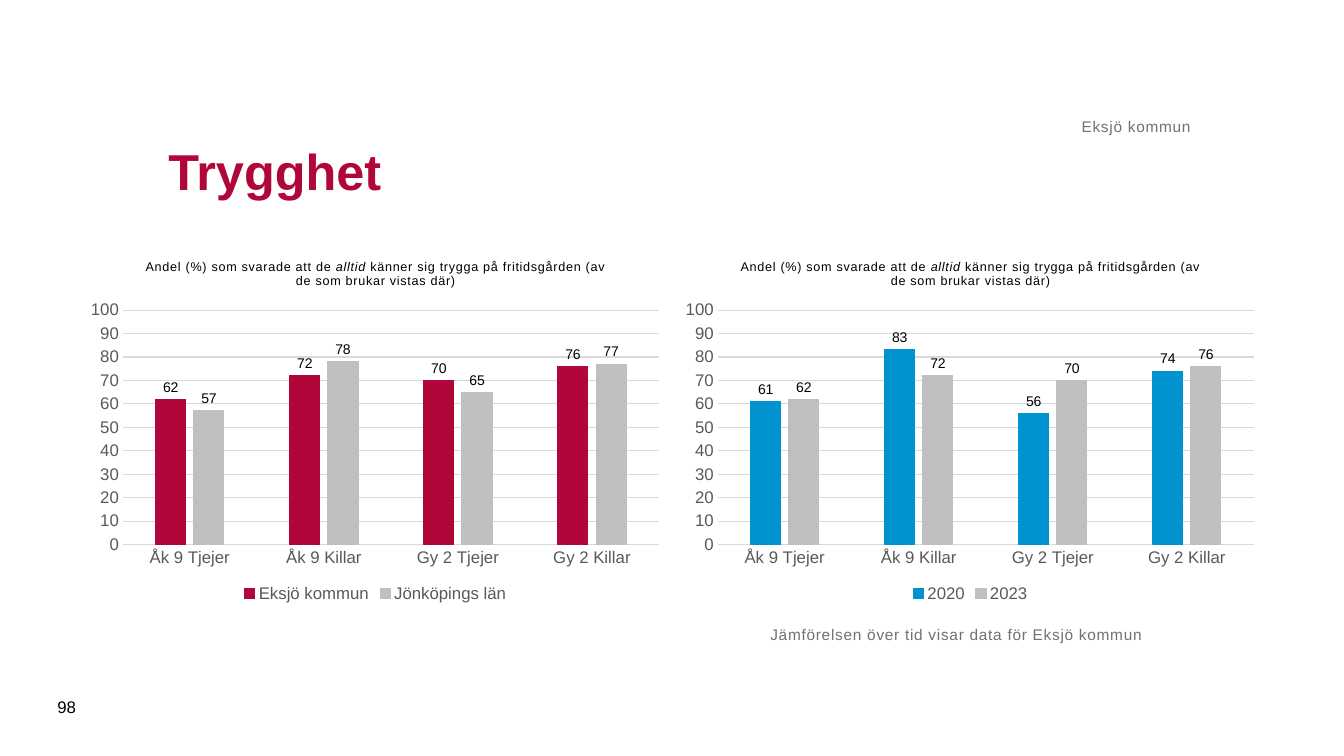
from lxml import etree
from pptx import Presentation
from pptx.chart.data import CategoryChartData
from pptx.dml.color import RGBColor
from pptx.enum.chart import XL_CHART_TYPE, XL_LABEL_POSITION, XL_LEGEND_POSITION, XL_TICK_MARK
from pptx.enum.text import MSO_ANCHOR, PP_ALIGN
from pptx.oxml import parse_xml
from pptx.oxml.ns import qn
from pptx.util import Inches, Pt

COLUMNS = XL_CHART_TYPE.COLUMN_CLUSTERED
OUTSIDE = XL_LABEL_POSITION.OUTSIDE_END
BOTTOM_LEGEND = XL_LEGEND_POSITION.BOTTOM
NO_TICK = XL_TICK_MARK.NONE
TOP, MIDDLE, BOTTOM = MSO_ANCHOR.TOP, MSO_ANCHOR.MIDDLE, MSO_ANCHOR.BOTTOM
LEFT, RIGHT, CENTER = PP_ALIGN.LEFT, PP_ALIGN.RIGHT, PP_ALIGN.CENTER

RED, BLUE, SILVER = "B1063A", "0093D0", "BFBFBF"
BLACK, AXIS_GREY, GRID_GREY, TEXT_GREY = "000000", "595959", "D9D9D9", "717171"
NUMBER_FORMAT = "#,##0;#,##0"
PLOT_SHARES = {"x": 0.073, "y": 0.187, "w": 0.906, "h": 0.643}

GROUPS = ["Åk 9 Tjejer", "Åk 9 Killar", "Gy 2 Tjejer", "Gy 2 Killar"]
QUESTION = [("Andel (%) som svarade att de ", False), ("alltid", True),
            (" känner sig trygga på fritidsgården (av de som brukar vistas där)", False)]
CHARTS = [
    [("Eksjö kommun", [62, 72, 70, 76], RED), ("Jönköpings län", [57, 78, 65, 77], SILVER)],
    [("2020", [61, 83, 56, 74], BLUE), ("2023", [62, 72, 70, 76], SILVER)],
]
CHART_LEFT, CHART_TOP, CHART_STEP = 0.79, 2.4, 5.9
CHART_SIZE = (5.87, 3.62)


def rgb(color):
    return RGBColor.from_string(color)


def set_font(font, size, color, bold=False):
    font.name, font.size, font.bold = "Arial", Pt(size), bold
    font.color.rgb = rgb(color)


def set_line(line, color):
    line.width = Pt(0.75)
    line.color.rgb = rgb(color)


def space_letters(run, points):
    run.font._element.set("spc", str(round(points * 100)))


def write(shape, box, text, size, color, anchor=TOP, align=LEFT, bold=False, spacing=0, inset=None):
    shape.left, shape.top, shape.width, shape.height = map(Inches, box)
    tf = shape.text_frame
    tf.word_wrap = True
    tf.vertical_anchor = anchor
    if inset is not None:
        tf.margin_left = tf.margin_top = tf.margin_right = tf.margin_bottom = Inches(inset)
    p = tf.paragraphs[0]
    p.alignment = align
    r = p.add_run()
    r.text = text
    set_font(p.font, size, color, bold)
    if spacing:
        space_letters(r, spacing)


def add_text(s, box, *args, **options):
    write(s.shapes.add_textbox(*map(Inches, box)), box, *args, **options)


def place_plot(chart):
    """Fix the inner plot area at its shares of the chart."""
    plot_area = chart._chartSpace.chart.plotArea
    for old in plot_area.findall(qn("c:layout")):
        plot_area.remove(old)
    layout = parse_xml('<c:layout xmlns:c="http://schemas.openxmlformats.org/drawingml/2006/chart"/>')
    manual = etree.SubElement(layout, qn("c:manualLayout"))
    settings = {"layoutTarget": "inner", "xMode": "edge", "yMode": "edge", **PLOT_SHARES}
    for name, value in settings.items():
        etree.SubElement(manual, qn("c:" + name)).set("val", str(value))
    plot_area.insert(0, layout)


def format_axes(chart):
    category, value = chart.category_axis, chart.value_axis
    for axis in (category, value):
        axis.major_tick_mark = axis.minor_tick_mark = NO_TICK
        set_font(axis.tick_labels.font, 12, AXIS_GREY)
    set_line(category.format.line, GRID_GREY)
    value.minimum_scale, value.maximum_scale, value.major_unit = 0, 100, 10
    value.tick_labels.number_format = NUMBER_FORMAT
    value.tick_labels.number_format_is_linked = False
    value.format.line.fill.background()
    set_line(value.major_gridlines.format.line, GRID_GREY)


def add_column_chart(s, box, series_list):
    data = CategoryChartData()
    data.categories = GROUPS
    for name, values, _ in series_list:
        data.add_series(name, values)
    chart = s.shapes.add_chart(COLUMNS, *map(Inches, box), data).chart
    set_font(chart.font, 10, BLACK)

    p = chart.chart_title.text_frame.paragraphs[0]
    p.alignment = CENTER
    set_font(p.font, 9, BLACK)
    for text, italic in QUESTION:
        r = p.add_run()
        r.text = text
        set_font(r.font, 9, BLACK)
        r.font.italic = italic
        space_letters(r, 0.5)
    chart.chart_title.include_in_layout = False

    chart.has_legend = True
    chart.legend.position = BOTTOM_LEGEND
    chart.legend.include_in_layout = False
    set_font(chart.legend.font, 12, AXIS_GREY)
    format_axes(chart)

    plot = chart.plots[0]
    plot.gap_width, plot.overlap, plot.vary_by_categories = 219, -27, False
    for series, (_, _, color) in zip(plot.series, series_list):
        series.format.fill.solid()
        series.format.fill.fore_color.rgb = rgb(color)
        set_line(series.format.line, color)
        labels = series.data_labels
        labels.show_value, labels.position = True, OUTSIDE
        labels.number_format, labels.number_format_is_linked = NUMBER_FORMAT, False
        set_font(labels.font, 10, BLACK)
    place_plot(chart)


def build_comparison_slide(prs):
    s = prs.slides.add_slide(prs.slide_layouts[5])
    write(s.shapes.title, (1.57, 0.98, 10.24, 1.42), "Trygghet", 36, RED, MIDDLE, bold=True)
    for i, series_list in enumerate(CHARTS):
        add_column_chart(s, (CHART_LEFT + i * CHART_STEP, CHART_TOP, *CHART_SIZE), series_list)
    add_text(s, (7.64, 6.2, 5.31, 0.94), "Jämförelsen över tid visar data för Eksjö kommun",
             11, TEXT_GREY, spacing=0.5, inset=0)
    add_text(s, (1.57, 0.62, 10.24, 0.73), "Eksjö kommun", 11, TEXT_GREY, BOTTOM, RIGHT,
             spacing=0.5, inset=0)
    add_text(s, (0.47, 6.81, 0.57, 0.4), "98", 12, BLACK, MIDDLE)


def main():
    prs = Presentation()
    prs.slide_width, prs.slide_height = Inches(13.33), Inches(7.5)
    build_comparison_slide(prs)
    prs.save("out.pptx")


if __name__ == "__main__":
    main()
